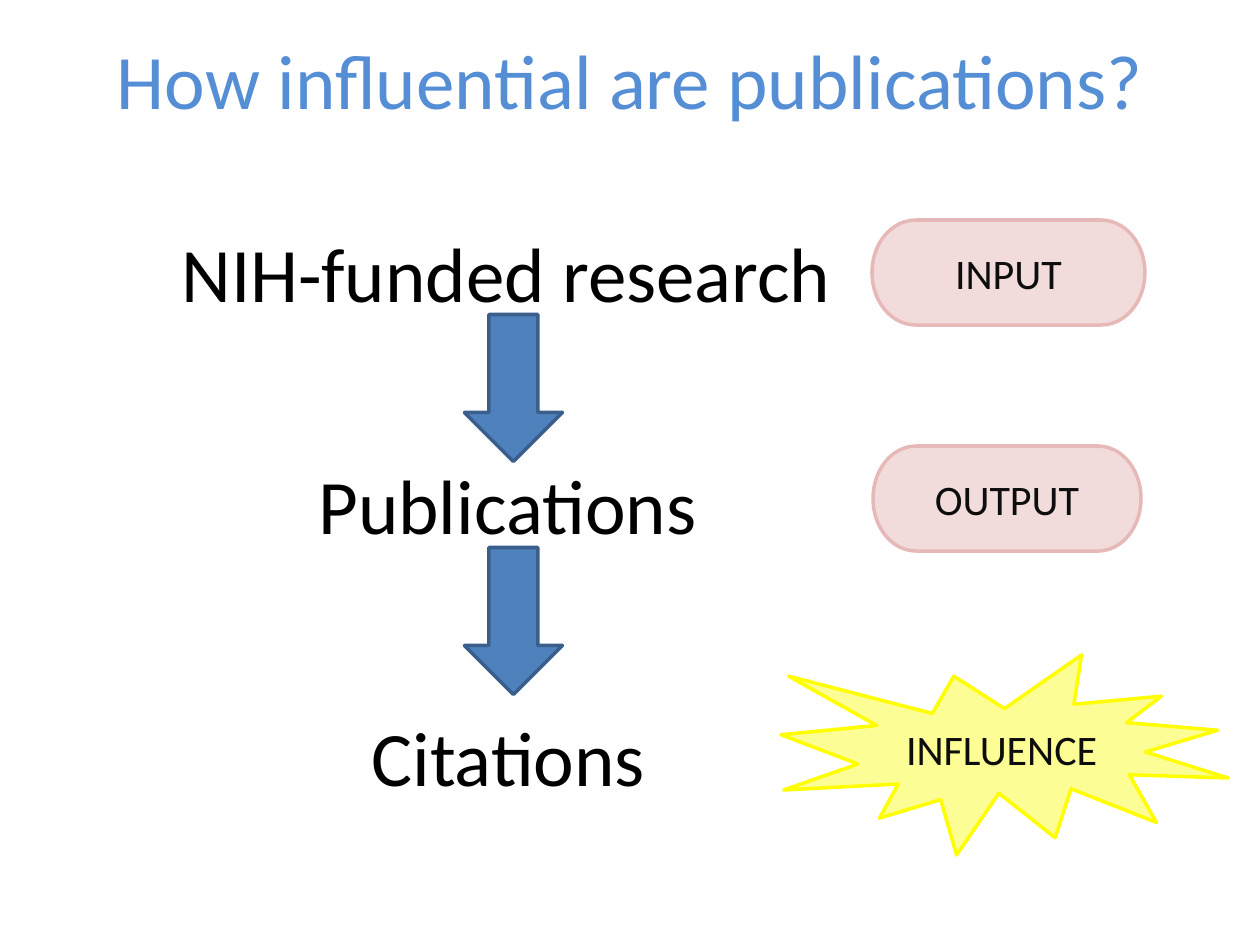
from dataclasses import dataclass

from pptx import Presentation
from pptx.dml.color import RGBColor
from pptx.enum.shapes import MSO_SHAPE as Shape
from pptx.enum.text import MSO_ANCHOR as Anchor, MSO_AUTO_SIZE as AutoSize, PP_ALIGN as Align
from pptx.util import Pt

EMU_PER_PX = 914400 / 126


@dataclass(frozen=True)
class Theme:
    """Colours, font and type sizes of the slide."""
    font: str = "Calibri"
    large: int = 44
    small: int = 24
    line_width: int = 2
    title: str = "558ED5"
    step: str = "000000"
    badge_text: str = "0D0D0D"
    arrow: tuple = ("4F81BD", "3A5F8C")
    stage: tuple = ("F2DCDB", "E6B9B8")
    burst: tuple = ("FDFD95", "FFFF00")


THEME = Theme()


def px(*lengths):
    """Turn pixel lengths into EMU."""
    return [round(length * EMU_PER_PX) for length in lengths]


def write(shape, text, size, color, align=Align.CENTER, anchor=Anchor.MIDDLE, wrap=True):
    """Write one formatted paragraph into a shape."""
    frame = shape.text_frame
    frame.word_wrap = wrap
    frame.vertical_anchor = anchor
    paragraph = frame.paragraphs[0]
    paragraph.alignment = align
    run = paragraph.add_run()
    run.text = text
    run.font.name = THEME.font
    run.font.size = Pt(size)
    run.font.color.rgb = RGBColor.from_string(color)


def add_filled(slide, kind, box, colors):
    """Add a preset shape with a fill and an outline colour."""
    shape = slide.shapes.add_shape(kind, *px(*box))
    fill, line = colors
    shape.shadow.inherit = False
    shape.fill.solid()
    shape.fill.fore_color.rgb = RGBColor.from_string(fill)
    shape.line.color.rgb = RGBColor.from_string(line)
    shape.line.width = Pt(THEME.line_width)
    return shape


def add_title(slide, box, text):
    """Place the title placeholder in its box."""
    title = slide.shapes.title
    title.left, title.top, title.width, title.height = px(*box)
    write(title, text, THEME.large, THEME.title)


def add_flow(slide, box, steps, arrow_tops):
    """Stack the steps on the centre line of the box with arrows between them."""
    left, top, width, _ = box
    center = left + width / 2
    for text, step_width, offset in steps:
        step_box = (center - step_width / 2, top + offset, step_width, 106)
        shape = slide.shapes.add_textbox(*px(*step_box))
        write(shape, text, THEME.large, THEME.step,
              align=Align.LEFT, anchor=Anchor.TOP, wrap=False)
        shape.text_frame.auto_size = AutoSize.SHAPE_TO_FIT_TEXT
    for offset in arrow_tops:
        arrow_box = (center - 70, top + offset, 147, 98)
        add_filled(slide, Shape.RIGHT_ARROW, arrow_box, THEME.arrow).rotation = 90


def add_badges(slide, box, badges):
    """Place the labelled badges relative to the box."""
    left, top, _, _ = box
    for text, kind, colors, (x, y, width, height) in badges:
        shape = add_filled(slide, kind, (left + x, top + y, width, height), colors)
        write(shape, text, THEME.small, THEME.badge_text)


def main():
    """Build and save the slide."""
    presentation = Presentation()
    presentation.slide_width, presentation.slide_height = px(1260, 945)
    slide = presentation.slides.add_slide(presentation.slide_layouts[5])
    add_title(slide, (63, 0, 1134, 158), "How influential are publications?")
    add_flow(
        slide, (169, 219, 682, 590),
        steps=[("NIH-funded research", 682, 0),
               ("Publications", 408, 232),
               ("Citations", 302, 484)],
        arrow_tops=[120, 353],
    )
    add_badges(slide, (781, 220, 447, 635), [
        ("INPUT", Shape.FLOWCHART_TERMINATOR, THEME.stage, (91, 0, 273, 105)),
        ("OUTPUT", Shape.FLOWCHART_TERMINATOR, THEME.stage, (92, 226, 268, 105)),
        ("INFLUENCE", Shape.EXPLOSION1, THEME.burst, (0, 435, 447, 200)),
    ])
    presentation.save("out.pptx")


if __name__ == "__main__":
    main()
